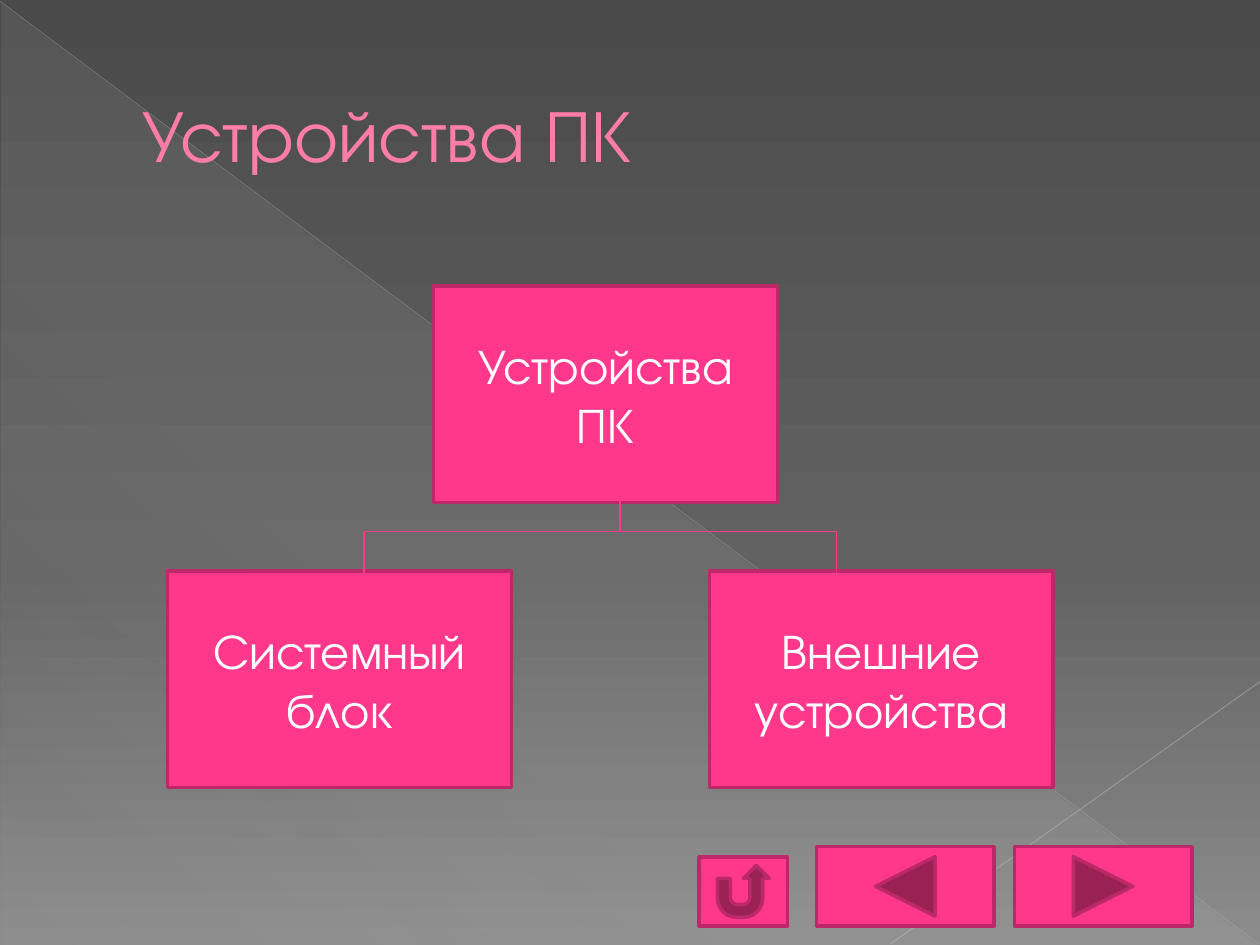
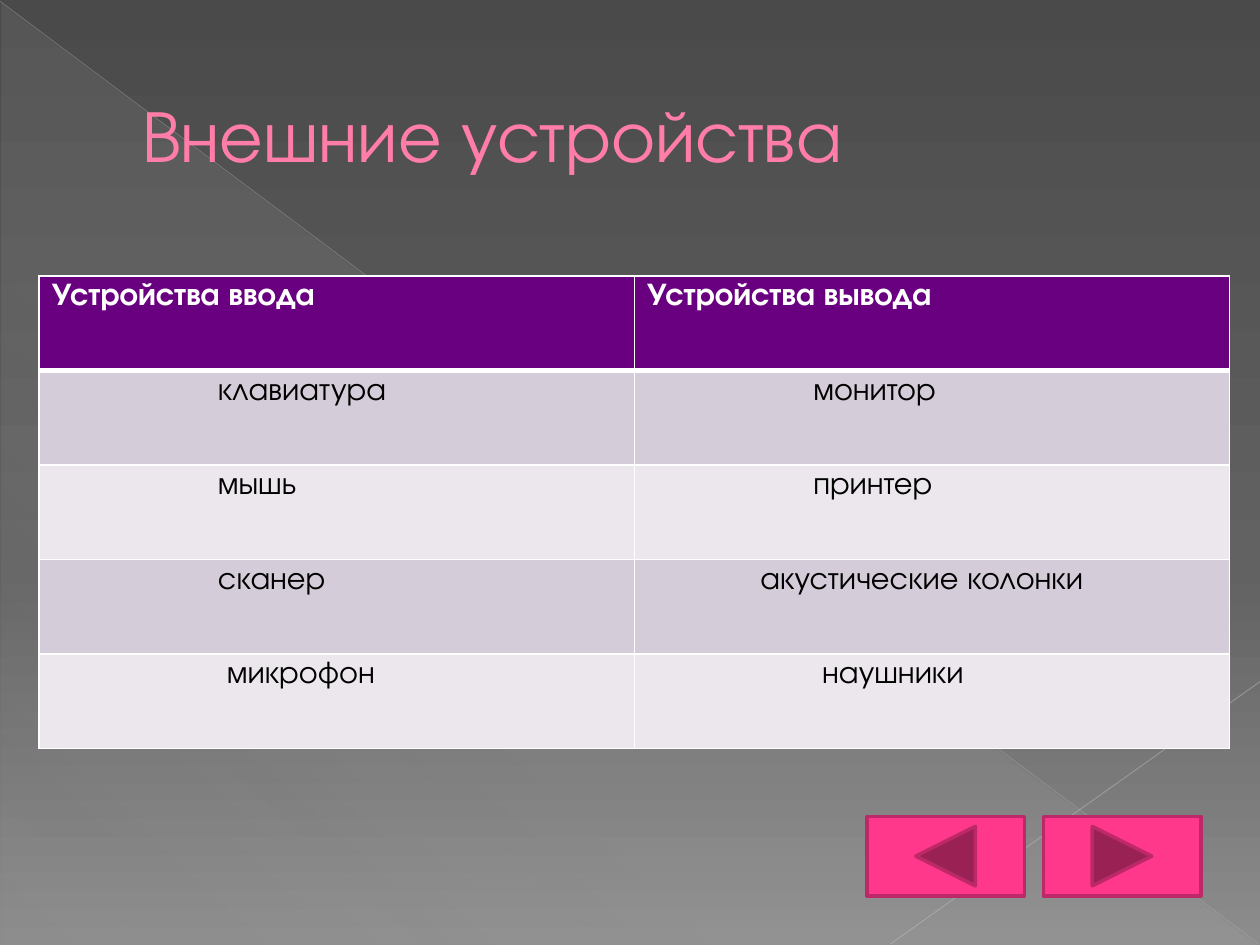
"""Build two slides on PC devices: a tree of device groups and a table of external devices."""
from lxml import etree
from pptx import Presentation
from pptx.dml.color import RGBColor
from pptx.enum.shapes import MSO_CONNECTOR, MSO_SHAPE
from pptx.enum.text import MSO_ANCHOR, PP_ALIGN
from pptx.oxml import parse_xml
from pptx.oxml.ns import nsdecls, qn
from pptx.util import Inches, Pt

STRAIGHT = MSO_CONNECTOR.STRAIGHT
RECT, TRIANGLE = MSO_SHAPE.RECTANGLE, MSO_SHAPE.RIGHT_TRIANGLE
NEXT = MSO_SHAPE.ACTION_BUTTON_FORWARD_OR_NEXT
BACK = MSO_SHAPE.ACTION_BUTTON_BACK_OR_PREVIOUS
RETURN = MSO_SHAPE.ACTION_BUTTON_RETURN
MIDDLE, CENTER, LEFT = MSO_ANCHOR.MIDDLE, PP_ALIGN.CENTER, PP_ALIGN.LEFT

FONT = "TeX Gyre Adventor"
COLORS = {
    "title": "FF7DA7", "title_edge": "B12761", "pink": "FF388C", "pink_edge": "BD2968",
    "white": "FFFFFF", "black": "000000", "header": "68007F",
    "band_dark": "D4CCD8", "band_light": "EBE7EC",
    "diagonal": "BFBFBF", "corner": "C6C6C6",
    "top": "4A4A4A", "mid": "626262", "bottom": "8C8C8C", "haze": "D2D2D2",
}
BACKGROUND = [(0, "top", 100), (60, "mid", 100), (100, "bottom", 100)]
HAZE = [(0, "haze", 10), (70, "haze", 8), (100, "haze", 1)]


def write_text(tf, words, size, color, align=LEFT, bold=False, indent=0):
    tf.word_wrap = True
    p = tf.paragraphs[0]
    p.alignment = align
    if indent:
        p_pr = p._p.get_or_add_pPr()
        p_pr.set("marL", str(Inches(indent)))
        p_pr.set("indent", "0")
    r = p.add_run()
    r.text = words
    r.font.name, r.font.size, r.font.bold = FONT, Pt(size), bold
    r.font.color.rgb = RGBColor.from_string(COLORS[color])
    return r


def draw_line(s, x1, y1, x2, y2, color, width, opacity=100):
    line = s.shapes.add_connector(STRAIGHT, Inches(x1), Inches(y1), Inches(x2), Inches(y2))
    line.line.color.rgb = RGBColor.from_string(COLORS[color])
    line.line.width = Pt(width)
    for clr in line.element.spPr.iter(qn("a:srgbClr")):
        etree.SubElement(clr, qn("a:alpha")).set("val", str(opacity * 1000))
    etree.SubElement(line.element.spPr, qn("a:effectLst"))


prs = Presentation()
prs.slide_width, prs.slide_height = Inches(10), Inches(7.5)

slides = []
for title in ("Устройства ПК", "Внешние устройства"):
    s = prs.slides.add_slide(prs.slide_layouts[6])
    slides.append(s)
    s.background.fill.gradient()
    sp = s.shapes.add_shape(TRIANGLE, Inches(0.01), Inches(0.02), Inches(9.98), Inches(7.48))
    sp.shadow.inherit = False
    sp.line.fill.background()
    sp.fill.gradient()
    grads = list(s.element.iter(qn("a:gradFill")))
    for grad, stops, angle in zip(grads, (BACKGROUND, HAZE), (90, 133)):
        marks = "".join(
            f'<a:gs pos="{pos * 1000}"><a:srgbClr val="{COLORS[color]}">'
            f'<a:alpha val="{opacity * 1000}"/></a:srgbClr></a:gs>'
            for pos, color, opacity in stops)
        new_grad = parse_xml(
            f'<a:gradFill {nsdecls("a")} rotWithShape="1"><a:gsLst>{marks}</a:gsLst>'
            f'<a:lin ang="{angle * 60000}" scaled="0"/></a:gradFill>')
        grad.getparent().replace(grad, new_grad)
    draw_line(s, 0, 0.01, 9.99, 7.49, "diagonal", 0.39, 35)
    draw_line(s, 10, 5.41, 7.07, 7.49, "corner", 0.47, 45)

    tf = s.shapes.add_textbox(Inches(0.5), Inches(0.29), Inches(9), Inches(1.53)).text_frame
    tf.vertical_anchor = MIDDLE
    r = write_text(tf, title, 42, "title", indent=0.53)
    r._r.get_or_add_rPr().insert(0, parse_xml(
        f'<a:ln {nsdecls("a")} w="{Pt(0.5)}"><a:solidFill>'
        f'<a:srgbClr val="{COLORS["title_edge"]}"/></a:solidFill></a:ln>'))

tree_slide, table_slide = slides

pink_shapes = [
    (tree_slide, RECT, 3.44, 2.27, 2.73, 1.72, "Устройства ПК"),
    (tree_slide, RECT, 1.33, 4.53, 2.73, 1.72, "Системный блок"),
    (tree_slide, RECT, 5.63, 4.53, 2.73, 1.72, "Внешние устройства"),
    (tree_slide, NEXT, 8.05, 6.72, 1.41, 0.63, ""),
    (tree_slide, BACK, 6.48, 6.72, 1.41, 0.63, ""),
    (tree_slide, RETURN, 5.55, 6.8, 0.7, 0.55, ""),
    (table_slide, NEXT, 8.28, 6.48, 1.25, 0.63, ""),
    (table_slide, BACK, 6.88, 6.48, 1.25, 0.63, ""),
]
for s, kind, x, y, w, h, words in pink_shapes:
    sp = s.shapes.add_shape(kind, Inches(x), Inches(y), Inches(w), Inches(h))
    sp.shadow.inherit = False
    sp.fill.solid()
    sp.fill.fore_color.rgb = RGBColor.from_string(COLORS["pink"])
    sp.line.color.rgb = RGBColor.from_string(COLORS["pink_edge"])
    sp.line.width = Pt(2)
    if words:
        sp.text_frame.vertical_anchor = MIDDLE
        write_text(sp.text_frame, words, 28, "white", CENTER)

left_x, right_x, trunk_x, bar_y = 2.89, 6.64, 4.92, 4.22
draw_line(tree_slide, left_x, bar_y, right_x, bar_y, "pink", 0.75)
for x in (left_x, right_x):
    draw_line(tree_slide, x, bar_y, x, 4.69, "pink", 0.75)
draw_line(tree_slide, trunk_x, 3.91, trunk_x, bar_y, "pink", 0.75)

devices = [
    [("Устройства ввода", 0), ("Устройства вывода", 0)],
    [("клавиатура", 1.32), ("монитор", 1.32)],
    [("мышь", 1.32), ("принтер", 1.32)],
    [("сканер", 1.32), ("акустические колонки", 0.9)],
    [("микрофон", 1.39), ("наушники", 1.39)],
]
table = table_slide.shapes.add_table(
    len(devices), 2, Inches(0.31), Inches(2.19), Inches(9.45), Inches(3.75)).table
for i, row in enumerate(devices):
    header = i == 0
    fill = "header" if header else "band_dark" if i % 2 else "band_light"
    widths = {"lnL": 1, "lnR": 1, "lnT": 3 if i == 1 else 1, "lnB": 3 if header else 1}
    for j, (words, indent) in enumerate(row):
        cell = table.cell(i, j)
        write_text(cell.text_frame, words, 18, "white" if header else "black",
                   bold=header, indent=indent)
        for side, width in widths.items():
            cell._tc.get_or_add_tcPr().append(parse_xml(
                f'<a:{side} {nsdecls("a")} w="{Pt(width)}"><a:solidFill>'
                f'<a:srgbClr val="{COLORS["white"]}"/></a:solidFill></a:{side}>'))
        cell.fill.solid()
        cell.fill.fore_color.rgb = RGBColor.from_string(COLORS[fill])

prs.save("out.pptx")
